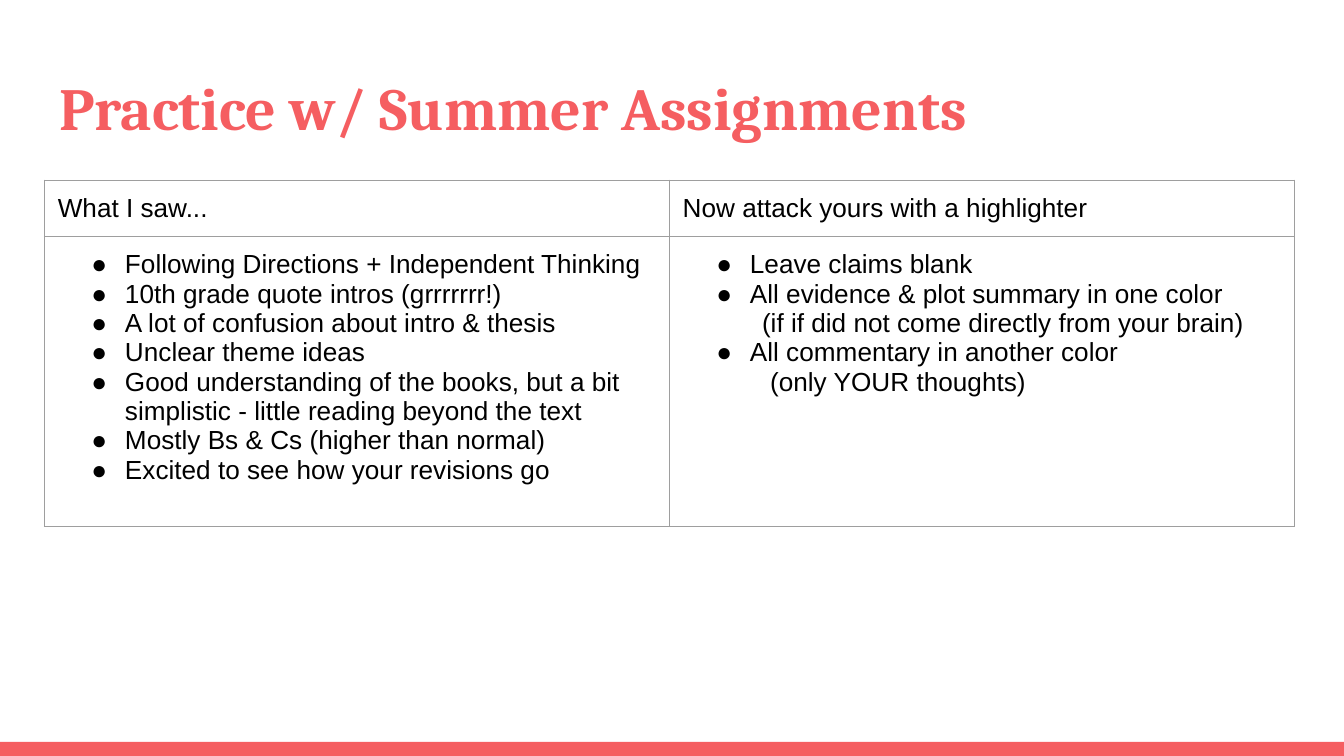
from dataclasses import dataclass

from lxml import etree
from pptx import Presentation
from pptx import util as u
from pptx.dml.color import RGBColor
from pptx.enum import shapes, text
from pptx.oxml import ns


@dataclass(frozen=True)
class Theme:
    """Colours, fonts, type sizes and shared measures of the slide."""

    accent: str = "F55E61"
    ink: str = "000000"
    rule: str = "9E9E9E"
    title_font: str = "Cambria"
    body_font: str = "Arial"
    title_size: int = 32
    body_size: int = 14
    rule_width: float = 0.75
    inset: float = 0.1
    bullet_indent: float = 0.5
    bullet_hang: float = 0.25


@dataclass
class Item:
    """One table paragraph, bulleted or indented by a given length."""

    words: str
    bullet: bool = True
    indent: float = 0


def write(para, words, *, font, size, color, bold=False):
    """Add formatted words to a paragraph."""
    span = para.add_run()
    span.text = words
    span.font.name = font
    span.font.size = u.Pt(size)
    span.font.bold = bold
    span.font.color.rgb = RGBColor.from_string(color)


class SlideBuilder:
    """Draws each kind of element on the current page."""

    def __init__(self, page, theme):
        """Keep the page and its theme."""
        self.page = page
        self.theme = theme

    def set_insets(self, target):
        """Give a text frame or cell equal margins."""
        for side in ("left", "right", "top", "bottom"):
            setattr(target, f"margin_{side}", u.Inches(self.theme.inset))

    def bar(self, left, top, width, height):
        """Add a plain accent bar."""
        box = self.page.shapes.add_shape(
            shapes.MSO_SHAPE.RECTANGLE, *map(u.Inches, (left, top, width, height))
        )
        box.shadow.inherit = False
        box.fill.solid()
        box.fill.fore_color.rgb = RGBColor.from_string(self.theme.accent)
        box.line.fill.background()

    def title(self, words, left, top, width, height):
        """Place and format the title placeholder."""
        box = self.page.shapes.title
        box.left, box.top, box.width, box.height = map(
            u.Inches, (left, top, width, height)
        )
        frame = box.text_frame
        frame.word_wrap = True
        frame.auto_size = text.MSO_AUTO_SIZE.NONE
        frame.vertical_anchor = text.MSO_ANCHOR.TOP
        self.set_insets(frame)
        para = frame.paragraphs[0]
        para.alignment = text.PP_ALIGN.LEFT
        write(para, words, font=self.theme.title_font, size=self.theme.title_size,
              color=self.theme.accent, bold=True)

    def indent(self, para, item):
        """Set the bullet and indent of a paragraph."""
        theme = self.theme
        props = para._p.get_or_add_pPr()
        left = theme.bullet_indent if item.bullet else item.indent
        hang = theme.bullet_hang if item.bullet else 0
        props.set("marL", str(u.Inches(left)))
        props.set("indent", str(-u.Inches(hang)))
        if item.bullet:
            size = etree.SubElement(props, ns.qn("a:buSzPts"))
            size.set("val", str(theme.body_size * 100))
            font = etree.SubElement(props, ns.qn("a:buFont"))
            font.set("typeface", theme.body_font)
            etree.SubElement(props, ns.qn("a:buChar")).set("char", "●")
        else:
            etree.SubElement(props, ns.qn("a:buNone"))

    def border(self, cell):
        """Outline a cell on all four sides."""
        props = cell._tc.get_or_add_tcPr()
        for place, side in enumerate(("lnL", "lnR", "lnT", "lnB")):
            line = etree.Element(ns.qn(f"a:{side}"))
            line.set("w", str(u.Pt(self.theme.rule_width)))
            fill = etree.SubElement(line, ns.qn("a:solidFill"))
            etree.SubElement(fill, ns.qn("a:srgbClr")).set("val", self.theme.rule)
            props.insert(place, line)

    def cell(self, cell, items):
        """Fill a table cell with items."""
        cell.fill.background()
        self.set_insets(cell)
        self.border(cell)
        frame = cell.text_frame
        for number, item in enumerate(items):
            para = frame.add_paragraph() if number else frame.paragraphs[0]
            self.indent(para, item)
            write(para, item.words, font=self.theme.body_font,
                  size=self.theme.body_size, color=self.theme.ink)

    def table(self, rows, left, top, column_width, row_heights):
        """Add a plain bordered table."""
        columns = len(rows[0])
        table = self.page.shapes.add_table(
            len(rows), columns, u.Inches(left), u.Inches(top),
            u.Inches(column_width * columns), u.Inches(sum(row_heights)),
        ).table
        table.first_row = table.horz_banding = False
        for column in table.columns:
            column.width = u.Inches(column_width)
        for row, height, contents in zip(table.rows, row_heights, rows):
            row.height = u.Inches(height)
            for cell, items in zip(row.cells, contents):
                self.cell(cell, items)


def main():
    """Build and save the slide."""
    deck = Presentation()
    deck.slide_width = u.Inches(10)
    deck.slide_height = deck.slide_width * 9 // 16
    page = deck.slides.add_slide(deck.slide_layouts.get_by_name("Title Only"))
    builder = SlideBuilder(page, Theme())

    observations = [
        "Following Directions + Independent Thinking",
        "10th grade quote intros (grrrrrrr!)",
        "A lot of confusion about intro & thesis",
        "Unclear theme ideas",
        "Good understanding of the books, but a bit simplistic"
        " - little reading beyond the text",
        "Mostly Bs & Cs (higher than normal)",
        "Excited to see how your revisions go",
    ]
    tasks = [
        Item("Leave claims blank"),
        Item("All evidence & plot summary in one color"),
        Item("(if if did not come directly from your brain)", False, 0.59),
        Item("All commentary in another color"),
        Item("(only YOUR thoughts)", False, 0.65),
    ]
    headings = ["What I saw...", "Now attack yours with a highlighter"]

    builder.bar(0, 5.52, 10, 0.11)
    builder.title("Practice w/ Summer Assignments", 0.34, 0.43, 9.32, 0.68)
    builder.table(
        [[[Item(words, False)] for words in headings],
         [[Item(words) for words in observations], tasks]],
        left=0.33, top=1.34, column_width=4.65, row_heights=(0.42, 2.16),
    )
    deck.save("out.pptx")


if __name__ == "__main__":
    main()
